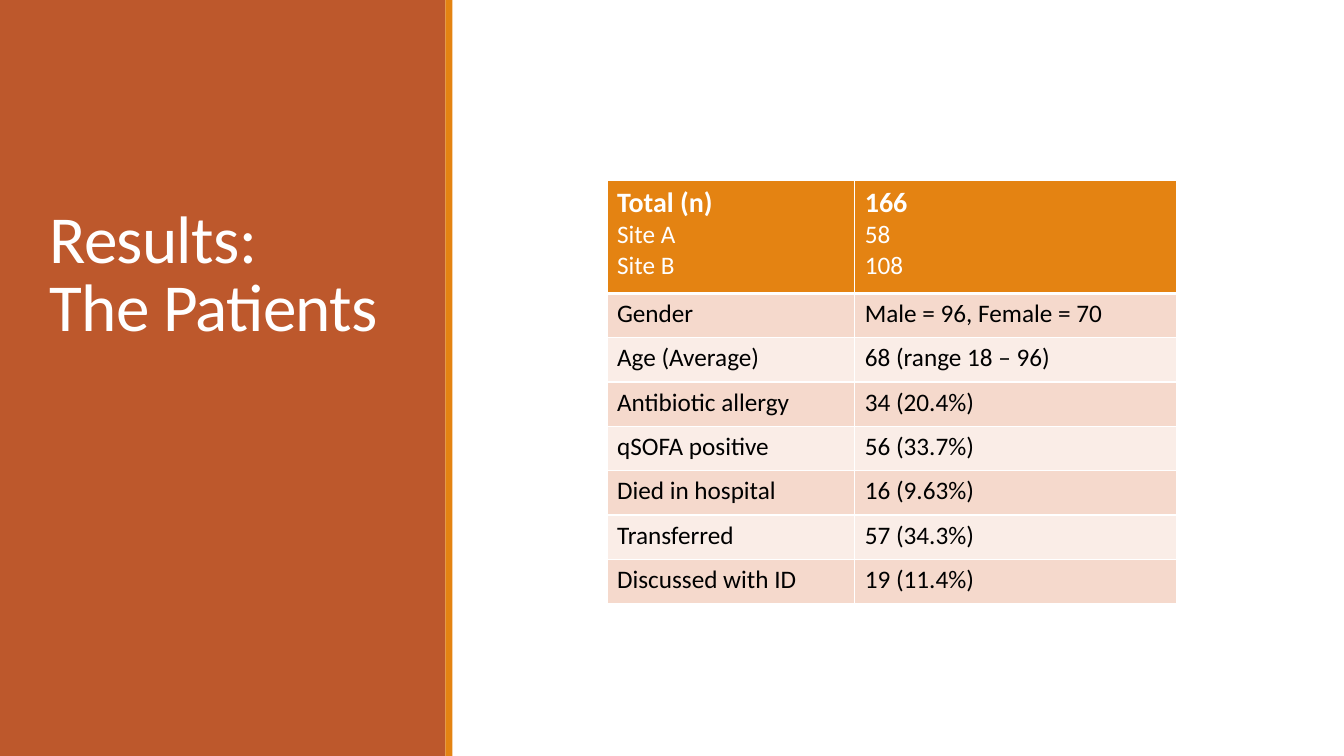
from lxml.etree import SubElement
from pptx import Presentation
from pptx.dml.color import RGBColor
from pptx.enum.shapes import MSO_SHAPE
from pptx.enum.text import MSO_ANCHOR, MSO_AUTO_SIZE, PP_ALIGN
from pptx.oxml.ns import qn
from pptx.util import Pt

HUES = {
    "rust": "BD582C",
    "gold": "E48312",
    "white": "FFFFFF",
    "black": "000000",
    "rose": "F5D9CC",
    "blush": "FAEDE7",
}
HEAD = [("Total (n)", "Site A", "Site B"), ("166", "58", "108")]
ROWS = [
    ("Gender", "Male = 96, Female = 70"),
    ("Age (Average)", "68 (range 18 – 96)"),
    ("Antibiotic allergy", "34 (20.4%)"),
    ("qSOFA positive", "56 (33.7%)"),
    ("Died in hospital", "16 (9.63%)"),
    ("Transferred", "57 (34.3%)"),
    ("Discussed with ID", "19 (11.4%)"),
]


def color(name):
    return RGBColor.from_string(HUES[name])


def style(item, form):
    for key, value in form.items():
        setattr(item, key, value)


def ink(run, size, hue, bold=False):
    style(run.font, {"name": "Calibri", "size": Pt(size), "bold": bold})
    run.font.color.rgb = color(hue)


def block(slide, box, hue):
    shape = slide.shapes.add_shape(MSO_SHAPE.RECTANGLE, *map(Pt, box))
    shape.shadow.inherit = False
    shape.fill.solid()
    shape.fill.fore_color.rgb = color(hue)
    shape.line.fill.background()


def panel(slide, box):
    left, top, width, height = box
    edge = 5
    block(slide, (left, top, width - edge, height), "rust")
    block(slide, (left + width - edge, top, edge, height), "gold")
    title = slide.shapes.title
    title.element.getparent().append(title.element)
    style(title, {
        "left": Pt(left + 28.2),
        "top": Pt(top + 44),
        "width": Pt(width - 33.2),
        "height": Pt(206.5),
    })
    frame = title.text_frame
    frame.text = "Results:\vThe Patients"
    style(frame, {
        "word_wrap": True,
        "auto_size": MSO_AUTO_SIZE.NONE,
        "vertical_anchor": MSO_ANCHOR.BOTTOM,
    })
    para = frame.paragraphs[0]
    style(para, {"alignment": PP_ALIGN.LEFT, "line_spacing": 0.85})
    for run in para.runs:
        ink(run, 48, "white")
        run.font._element.set("spc", "-50")


def border(cell, sides):
    props = cell._tc.get_or_add_tcPr()
    for side, width in sides.items():
        line = SubElement(props, qn(f"a:ln{side}"), w=str(Pt(width)))
        fill = SubElement(line, qn("a:solidFill"))
        SubElement(fill, qn("a:srgbClr"), val=HUES["white"])


def enter(cell, lines, hue, font, sides):
    border(cell, sides)
    cell.fill.solid()
    cell.fill.fore_color.rgb = color(hue)
    cell.text = "\n".join(lines)
    for index, para in enumerate(cell.text_frame.paragraphs):
        lead = len(lines) > 1 and index == 0
        ink(para.runs[0], 20 if lead else 18, font, lead)


def table(slide, box):
    left, top, width, height = box
    first, head = 177, 80.6
    data = [HEAD] + [[(text,) for text in row] for row in ROWS]
    grid = slide.shapes.add_table(len(data), 2, *map(Pt, box)).table
    for column, size in zip(grid.columns, (first, width - first)):
        column.width = Pt(size)
    step = (height - head) / len(ROWS)
    for index, row in enumerate(data):
        grid.rows[index].height = Pt(step if index else head)
        hue = ("blush", "rose")[index % 2] if index else "gold"
        font = "black" if index else "white"
        sides = {"L": 1, "R": 1, "T": 3 if index == 1 else 1, "B": 1 if index else 3}
        for spot, lines in enumerate(row):
            enter(grid.cell(index, spot), lines, hue, font, sides)


def main():
    deck = Presentation()
    style(deck, {"slide_width": Pt(960), "slide_height": Pt(540)})
    slide = deck.slides.add_slide(deck.slide_layouts[5])
    slide.background.fill.solid()
    slide.background.fill.fore_color.rgb = color("white")
    panel(slide, (0, 0, 323.2, 540))
    table(slide, (433.6, 129, 406.8, 302.4))
    deck.save("out.pptx")


if __name__ == "__main__":
    main()
